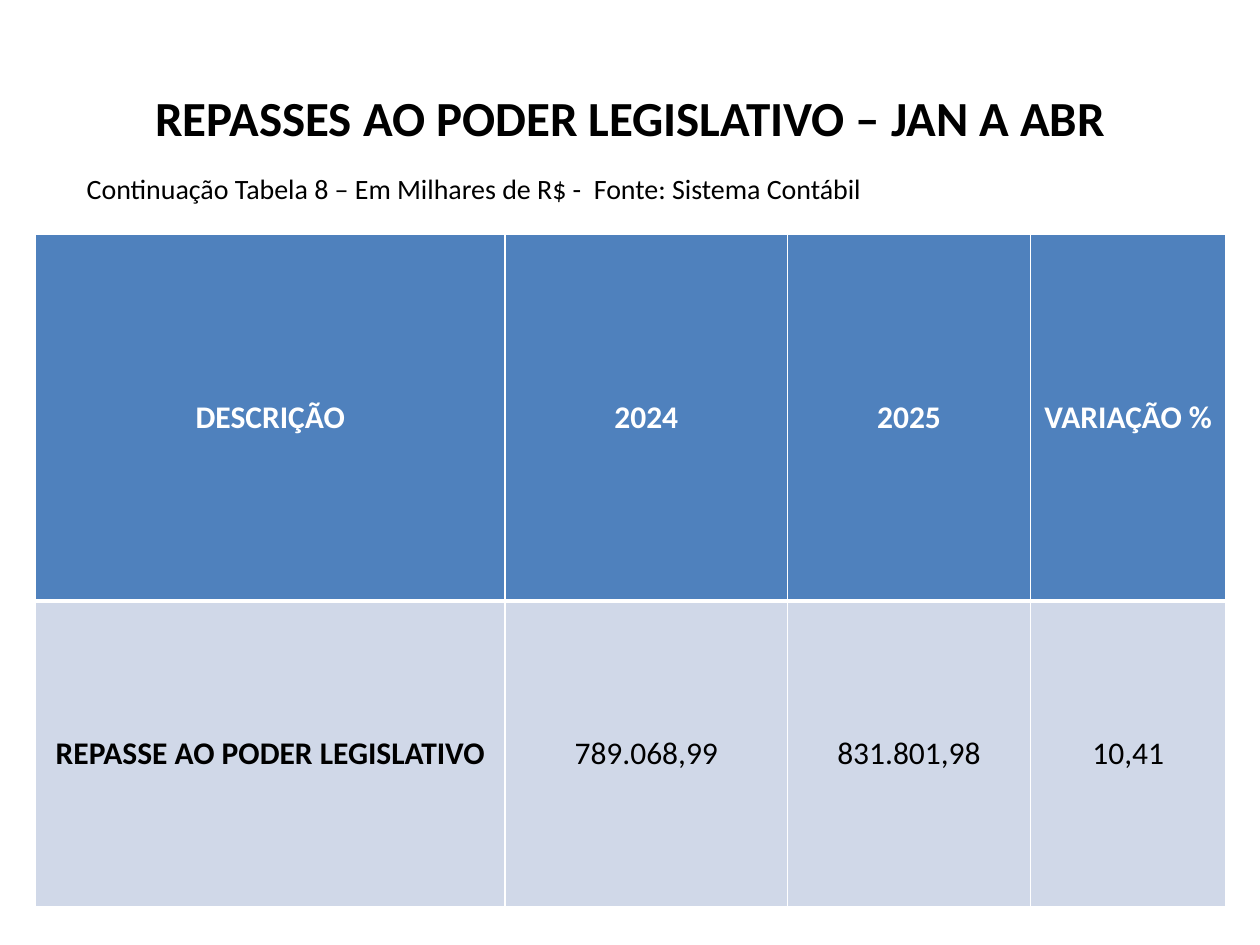
from lxml import etree
from pptx import Presentation
from pptx import util as u
from pptx.dml.color import RGBColor
from pptx.enum import text
from pptx.oxml.ns import qn

TITLE = "REPASSES AO PODER LEGISLATIVO – JAN A ABR"
SUBTITLE = "Continuação Tabela 8 – Em Milhares de R$ -  Fonte: Sistema Contábil"
ROWS = [
    ("DESCRIÇÃO", "2024", "2025", "VARIAÇÃO %"),
    ("REPASSE AO PODER LEGISLATIVO", "789.068,99", "831.801,98", "10,41"),
]
COLUMN_WIDTHS = (3.73, 2.24, 1.93, 1.55)
ROW_HEIGHTS = (2.91, 2.43)
TABLE_LEFT, TABLE_TOP = 0.28, 1.86

THEME = {
    "font": "Calibri",
    "title_size": 28, "subtitle_size": 16, "table_size": 18,
    "ink": "000000", "white": "FFFFFF",
    "header_fill": "4F81BD", "body_fill": "D0D8E8",
    "thin": 1, "thick": 3,
}


def write(frame, content, *, size, color=THEME["ink"], bold=False,
          align=text.PP_ALIGN.CENTER):
    paragraph = frame.paragraphs[0]
    paragraph.alignment = align
    run = paragraph.add_run()
    run.text = content
    run.font.name = THEME["font"]
    run.font.size = u.Pt(size)
    run.font.bold = bold
    run.font.color.rgb = RGBColor.from_string(color)


def add_text_box(slide, box, content, anchor, **text_format):
    frame = slide.shapes.add_textbox(*map(u.Inches, box)).text_frame
    frame.word_wrap = True
    frame.vertical_anchor = anchor
    write(frame, content, **text_format)


def set_borders(cell, widths):
    """Draw white borders; widths maps an edge letter (L, R, T, B) to points."""
    properties = cell._tc.get_or_add_tcPr()
    for index, (edge, width) in enumerate(widths.items()):
        line = etree.Element(qn(f"a:ln{edge}"), w=str(u.Pt(width)))
        fill = etree.SubElement(line, qn("a:solidFill"))
        etree.SubElement(fill, qn("a:srgbClr"), val=THEME["white"])
        properties.insert(index, line)


def add_transfer_table(slide):
    table = slide.shapes.add_table(
        len(ROWS), len(COLUMN_WIDTHS), u.Inches(TABLE_LEFT), u.Inches(TABLE_TOP),
        u.Inches(sum(COLUMN_WIDTHS)), u.Inches(sum(ROW_HEIGHTS))).table
    for column, width in zip(table.columns, COLUMN_WIDTHS):
        column.width = u.Inches(width)
    for row, height in zip(table.rows, ROW_HEIGHTS):
        row.height = u.Inches(height)

    for row_index, values in enumerate(ROWS):
        header = row_index == 0
        for column_index, value in enumerate(values):
            cell = table.cell(row_index, column_index)
            cell.vertical_anchor = text.MSO_ANCHOR.MIDDLE
            cell.fill.solid()
            cell.fill.fore_color.rgb = RGBColor.from_string(
                THEME["header_fill" if header else "body_fill"])
            write(cell.text_frame, value, size=THEME["table_size"],
                  color=THEME["white" if header else "ink"],
                  bold=header or column_index == 0)
            thin, thick = THEME["thin"], THEME["thick"]
            set_borders(cell, {"L": thin, "R": thin,
                               "T": thin if header else thick,
                               "B": thick if header else thin})


def main():
    presentation = Presentation()
    presentation.slide_width = u.Inches(10)
    presentation.slide_height = u.Inches(7.5)
    slide = presentation.slides.add_slide(presentation.slide_layouts[6])
    add_text_box(slide, (0.5, 0.3, 9, 1.25), TITLE, text.MSO_ANCHOR.MIDDLE,
                 size=THEME["title_size"], bold=True)
    add_text_box(slide, (0.59, 1.31, 9, 0.55), SUBTITLE, text.MSO_ANCHOR.TOP,
                 size=THEME["subtitle_size"], align=text.PP_ALIGN.LEFT)
    add_transfer_table(slide)
    presentation.save("out.pptx")


if __name__ == "__main__":
    main()
